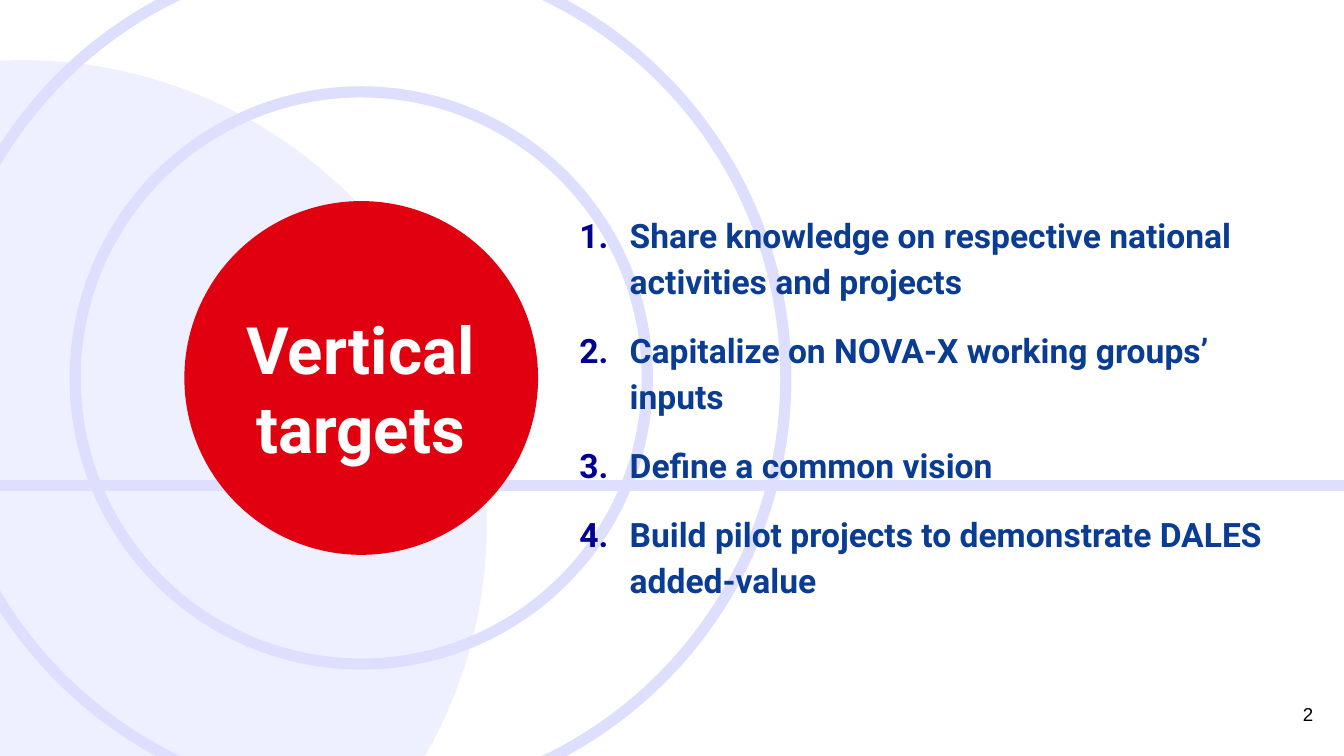
from pptx import Presentation
from pptx.dml.color import RGBColor
from pptx.enum.shapes import MSO_CONNECTOR, MSO_SHAPE
from pptx.enum.text import MSO_ANCHOR, PP_ALIGN
from pptx.oxml.ns import qn
from pptx.util import Pt
from lxml.etree import SubElement

CENTER = (193.5, 202.5)
TARGETS = [
    "Share knowledge on respective national activities and projects",
    "Capitalize on NOVA-X working groups’ inputs",
    "Define a common vision",
    "Build pilot projects to demonstrate DALES added-value",
]


def color(hex_code):
    return RGBColor.from_string(hex_code)


def write_text(paragraph, text, size=18, font="Roboto", hex_code="093C92",
               bold=True, align=PP_ALIGN.LEFT):
    paragraph.alignment = align
    run = paragraph.add_run()
    run.text = text
    run.font.size = Pt(size)
    run.font.name = font
    run.font.bold = bold
    run.font.color.rgb = color(hex_code)


class TargetSlide:
    pale = "DEDFFF"
    red = "E1000F"
    number_color = "000091"
    line_width = Pt(6)
    inset = Pt(7.2)
    indent = Pt(27)

    def __init__(self, presentation):
        self.slide = presentation.slides.add_slide(presentation.slide_layouts[6])

    def circle(self, center, diameter, fill=None, opacity=100):
        """Draw a filled disc, or an outlined ring when no fill is given."""
        left, top = (middle - diameter / 2 for middle in center)
        shape = self.slide.shapes.add_shape(
            MSO_SHAPE.OVAL, Pt(left), Pt(top), Pt(diameter), Pt(diameter))
        shape.shadow.inherit = False
        if fill is None:
            shape.fill.background()
            shape.line.color.rgb = color(self.pale)
            shape.line.width = self.line_width
            return
        shape.fill.solid()
        shape.fill.fore_color.rgb = color(fill)
        shape.line.fill.background()
        if opacity < 100:
            fill_color = shape.fill._xPr.find(qn("a:solidFill"))[0]
            SubElement(fill_color, qn("a:alpha"), val=str(opacity * 1000))

    def horizontal_line(self, left, right, y):
        line = self.slide.shapes.add_connector(
            MSO_CONNECTOR.STRAIGHT, Pt(left), Pt(y), Pt(right), Pt(y))
        line.line.color.rgb = color(self.pale)
        line.line.width = self.line_width
        SubElement(line._element.spPr, qn("a:effectLst"))

    def text_box(self, left, top, width, height, anchor=MSO_ANCHOR.TOP):
        box = self.slide.shapes.add_textbox(Pt(left), Pt(top), Pt(width), Pt(height))
        frame = box.text_frame
        frame.word_wrap = True
        frame.vertical_anchor = anchor
        frame.margin_left = frame.margin_right = self.inset
        frame.margin_top = frame.margin_bottom = self.inset
        return frame

    def label(self, text, left, top, width, height,
              anchor=MSO_ANCHOR.TOP, **text_format):
        frame = self.text_box(left, top, width, height, anchor)
        write_text(frame.paragraphs[0], text, **text_format)

    def numbered_list(self, items, left, top, width, height):
        frame = self.text_box(left, top, width, height, MSO_ANCHOR.MIDDLE)
        for index, item in enumerate(items):
            paragraph = frame.add_paragraph() if index else frame.paragraphs[0]
            write_text(paragraph, item)
            paragraph.line_spacing = 1.15
            paragraph.space_after = Pt(12)
            properties = paragraph._p.get_or_add_pPr()
            properties.set("marL", str(self.indent))
            properties.set("indent", str(-self.indent))
            bullet_color = SubElement(properties, qn("a:buClr"))
            SubElement(bullet_color, qn("a:srgbClr"), val=self.number_color)
            SubElement(properties, qn("a:buFont"), typeface="Roboto")
            SubElement(properties, qn("a:buAutoNum"), type="arabicPeriod")


def main():
    presentation = Presentation()
    presentation.slide_width = Pt(720)
    presentation.slide_height = Pt(405)
    page = TargetSlide(presentation)

    # Background disc, rings and line
    page.circle((12, 281), 497.5, fill=page.pale, opacity=46)
    page.circle(CENTER, 455)
    page.horizontal_line(-12, 728, 260)
    page.circle(CENTER, 306.5)

    # Page number
    page.label("2", 667.5, 367, 43, 31, MSO_ANCHOR.MIDDLE, size=10, font="Arial",
               hex_code="000000", bold=False, align=PP_ALIGN.RIGHT)

    # Title in the red disc
    page.circle(CENTER, 189.5, fill=page.red)
    page.label("Vertical targets", 114.5, 158.5, 157.5, 99.5, size=35,
               hex_code="FFFFFF", align=PP_ALIGN.CENTER)

    # Targets
    page.numbered_list(TARGETS, 303.25, 91.5, 389.5, 250.5)

    presentation.save("out.pptx")


if __name__ == "__main__":
    main()
